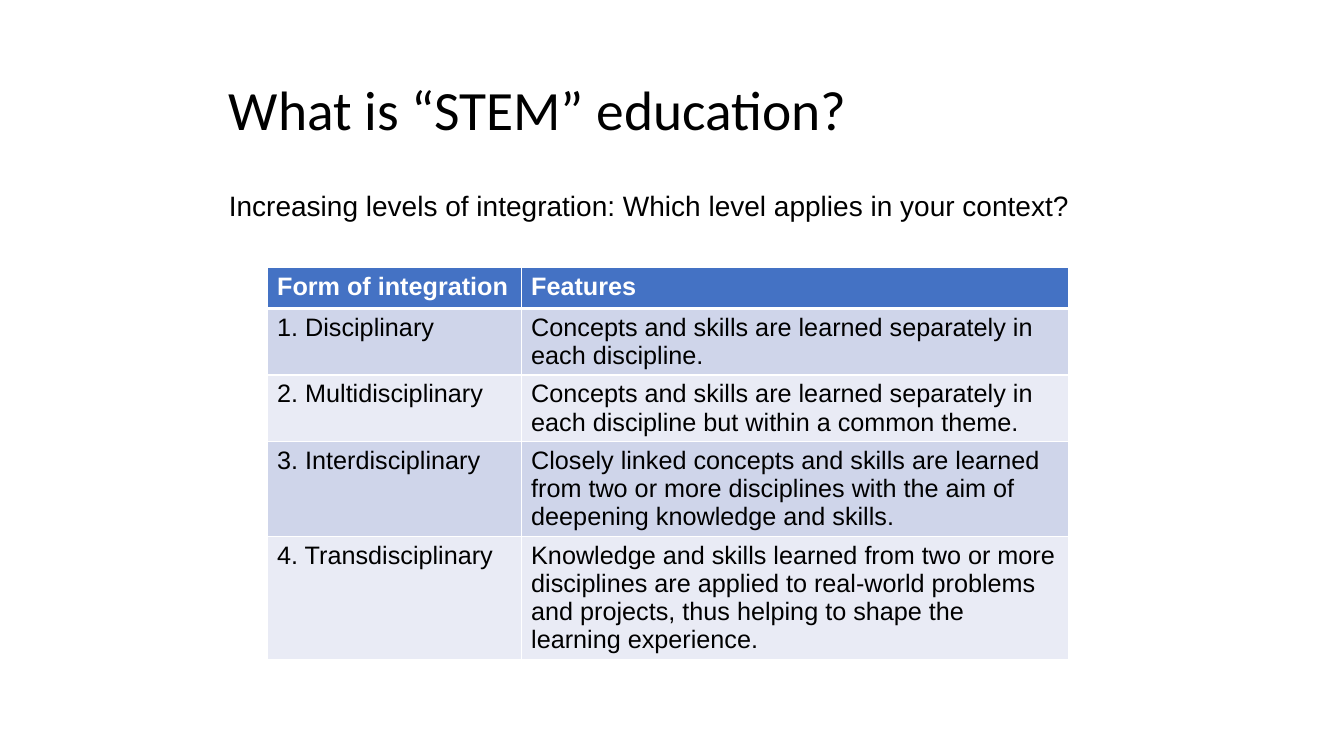
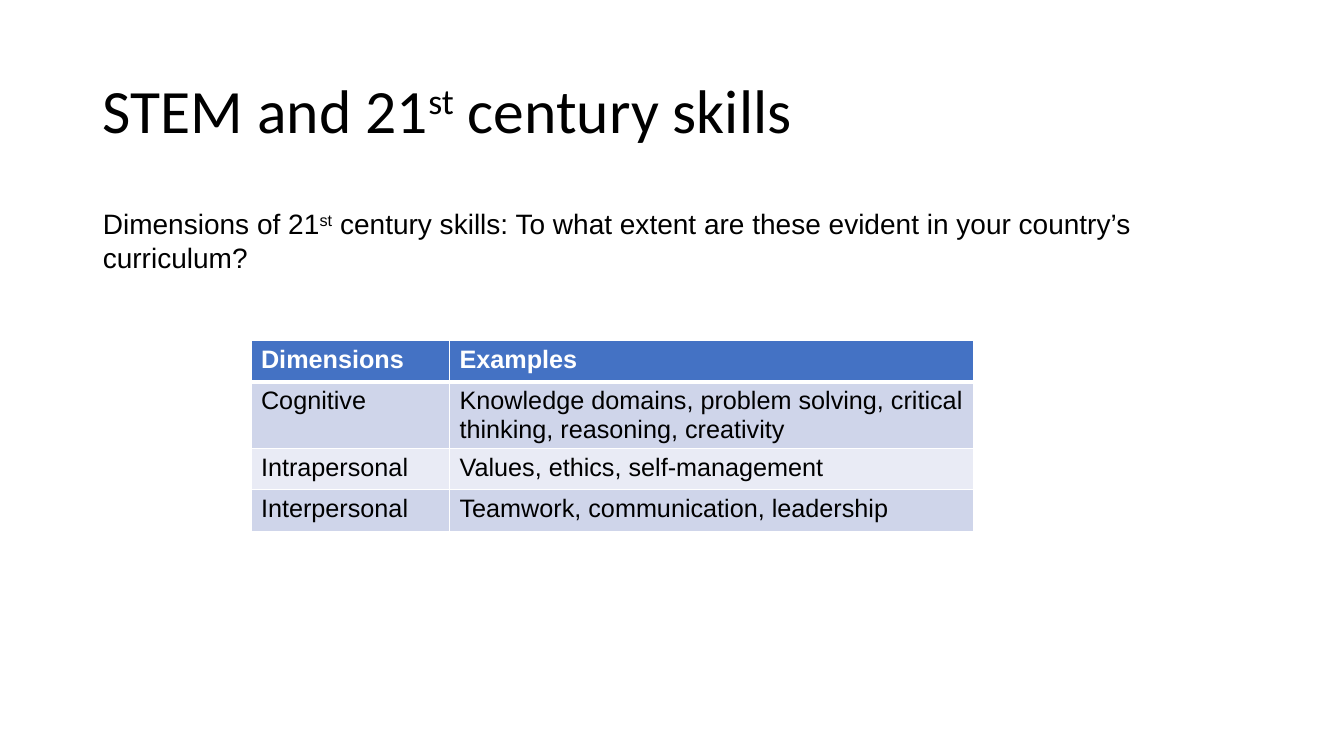
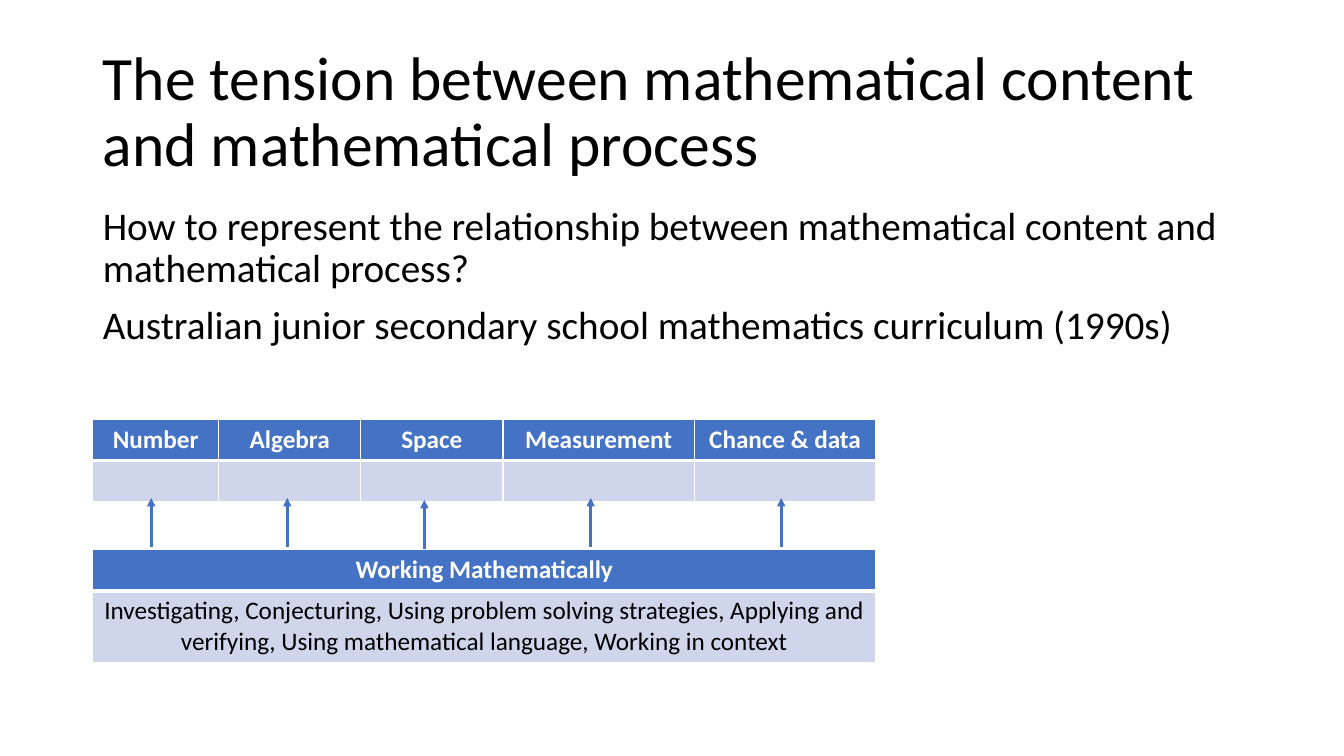
from dataclasses import dataclass

from pptx import Presentation
from pptx.dml.color import RGBColor
from pptx.enum.shapes import MSO_CONNECTOR as Connector
from pptx.enum.text import MSO_ANCHOR as Anchor, MSO_AUTO_SIZE as AutoSize, PP_ALIGN as Align
from pptx.oxml.ns import qn
from pptx.util import Inches, Pt
from lxml.etree import SubElement


@dataclass(frozen=True)
class Theme:
    heading_font: str = "Calibri"
    text_font: str = "Arial"
    ink: str = "000000"
    paper: str = "FFFFFF"
    accent: str = "4472C4"
    bands: tuple = ("CFD5EA", "E9EBF5")
    title_size: float = 44
    small_title_size: float = 39.6
    lead_size: float = 28
    body_size: float = 20
    table_size: float = 18
    rule: float = 1
    heavy_rule: float = 3
    arrow_width: float = 2


THEME = Theme()

# Grid: 40 columns by 30 rows
WIDTH, HEIGHT = Inches(13.33), Inches(7.5)
TITLE_BOX = (2.76, 1.6, 34.5, 5.8)
BODY_BOX = (2.76, 8, 34.5, 19.04)
ROW_HEIGHT = 1.64


def col(count):
    return round(WIDTH * count / 40)


def row(count):
    return round(HEIGHT * count / 30)


def set_attributes(target, values):
    for name, value in values.items():
        setattr(target, name, value)


# Text
def write(paragraph, text, font, size, color=THEME.ink, bold=False, **layout):
    """Write text, with the parts between ^ marks raised."""
    set_attributes(paragraph, layout)
    for index, part in enumerate(text.split("^")):
        run = paragraph.add_run()
        run.text = part
        set_attributes(run.font, {"name": font, "size": Pt(size), "bold": bold})
        run.font.color.rgb = RGBColor.from_string(color)
        if index % 2:
            run.font._element.set("baseline", "30000")


def place(placeholder, box, anchor):
    left, top, width, height = box
    set_attributes(placeholder, {"left": col(left), "top": row(top),
                                 "width": col(width), "height": row(height)})
    frame = placeholder.text_frame
    set_attributes(frame, {"word_wrap": True, "auto_size": AutoSize.NONE,
                           "vertical_anchor": anchor})
    return frame


def add_title(slide, text, box=TITLE_BOX, size=THEME.title_size):
    frame = place(slide.shapes.title, box, Anchor.MIDDLE)
    write(frame.paragraphs[0], text, THEME.heading_font, size,
          alignment=Align.LEFT, line_spacing=0.9)


def add_body(slide, lines, box=BODY_BOX, font=THEME.text_font,
             size=THEME.body_size, spacing=0.9):
    frame = place(slide.placeholders[1], box, Anchor.TOP)
    for index, line in enumerate(lines):
        paragraph = frame.add_paragraph() if index else frame.paragraphs[0]
        write(paragraph, line, font, size, alignment=Align.LEFT,
              line_spacing=spacing, space_before=Pt(10))
        properties = paragraph._p.get_or_add_pPr()
        for name in ("marL", "indent"):
            properties.set(name, "0")
        SubElement(properties, qn("a:buNone"))


# Tables
def add_borders(cell, widths):
    properties = cell._tc.get_or_add_tcPr()
    for side, width in widths.items():
        border = SubElement(properties, qn(f"a:ln{side}"), w=str(Pt(width)))
        fill = SubElement(border, qn("a:solidFill"))
        SubElement(fill, qn("a:srgbClr"), val=THEME.paper)


def add_table(slide, left, top, widths, rows, font=THEME.text_font, align=Align.LEFT):
    table = slide.shapes.add_table(
        len(rows), len(widths), col(left), row(top),
        col(sum(widths)), row(ROW_HEIGHT * len(rows))).table
    for column, width in zip(table.columns, widths):
        column.width = col(width)
    for r, texts in enumerate(rows):
        header = r == 0
        fill = THEME.accent if header else THEME.bands[(r - 1) % 2]
        for c, text in enumerate(texts):
            cell = table.cell(r, c)
            add_borders(cell, {
                "L": THEME.rule, "R": THEME.rule,
                "T": THEME.heavy_rule if r == 1 else THEME.rule,
                "B": THEME.heavy_rule if header else THEME.rule})
            cell.fill.solid()
            cell.fill.fore_color.rgb = RGBColor.from_string(fill)
            if text:
                write(cell.text_frame.paragraphs[0], text, font, THEME.table_size,
                      THEME.paper if header else THEME.ink, header, alignment=align)


# Arrows
def add_up_arrow(slide, x, bottom, length):
    arrow = slide.shapes.add_connector(
        Connector.STRAIGHT, col(x), row(bottom), col(x), row(bottom - length))
    arrow.line.color.rgb = RGBColor.from_string(THEME.accent)
    arrow.line.width = Pt(THEME.arrow_width)
    SubElement(arrow.line._get_or_add_ln(), qn("a:tailEnd"), type="triangle")
    SubElement(arrow._element.spPr, qn("a:effectLst"))


# Slides
def build_integration(slide):
    add_title(slide, "What is “STEM” education?", (6.51, 3.04, 27, 2.84),
              THEME.small_title_size)
    add_body(slide, ["Increasing levels of integration: Which level applies in your context?"],
             (6.51, 7.44, 27, 16.84))
    add_table(slide, 7.95, 10.6, (7.56, 16.29), [
        ("Form of integration", "Features"),
        ("1. Disciplinary",
         "Concepts and skills are learned separately in each discipline."),
        ("2. Multidisciplinary",
         "Concepts and skills are learned separately in each discipline "
         "but within a common theme."),
        ("3. Interdisciplinary",
         "Closely linked concepts and skills are learned from two or more disciplines "
         "with the aim of deepening knowledge and skills."),
        ("4. Transdisciplinary",
         "Knowledge and skills learned from two or more disciplines are applied to "
         "real-world problems and projects, thus helping to shape the learning experience."),
    ])


def build_skills(slide):
    add_title(slide, "STEM and 21^st^ century skills")
    add_body(slide, ["Dimensions of 21^st^ century skills: To what extent are these "
                     "evident in your country’s curriculum?"], spacing=1.0)
    add_table(slide, 7.47, 13.52, (5.91, 15.6), [
        ("Dimensions", "Examples"),
        ("Cognitive",
         "Knowledge domains, problem solving, critical thinking, reasoning, creativity"),
        ("Intrapersonal", "Values, ethics, self-management"),
        ("Interpersonal", "Teamwork, communication, leadership"),
    ])


def build_tension(slide):
    add_title(slide, "The tension between mathematical content and mathematical process")
    add_body(slide, [
        "How to represent the relationship between mathematical content "
        "and mathematical process?",
        "Australian junior secondary school mathematics curriculum (1990s)",
    ], font=THEME.heading_font, size=THEME.lead_size)

    strands = ("Number", "Algebra", "Space", "Measurement", "Chance & data")
    strand_widths = (3.75, 4.23, 4.23, 5.7, 5.4)
    process = [
        ("Working Mathematically",),
        ("Investigating, Conjecturing, Using problem solving strategies, Applying and "
         "verifying, Using mathematical language, Working in context",),
    ]
    style = {"font": THEME.heading_font, "align": Align.CENTER}
    add_table(slide, 2.76, 16.64, strand_widths, [strands, ("",) * len(strands)], **style)
    add_table(slide, 2.76, 21.8, (sum(strand_widths),), process, **style)

    for x, bottom in ((4.5, 21.72), (8.55, 21.72), (12.63, 21.8),
                      (17.58, 21.72), (23.25, 21.72)):
        add_up_arrow(slide, x, bottom, 1.96)


def main():
    deck = Presentation()
    set_attributes(deck, {"slide_width": WIDTH, "slide_height": HEIGHT})
    for build in (build_integration, build_skills, build_tension):
        build(deck.slides.add_slide(deck.slide_layouts[1]))
    deck.save("out.pptx")


if __name__ == "__main__":
    main()
